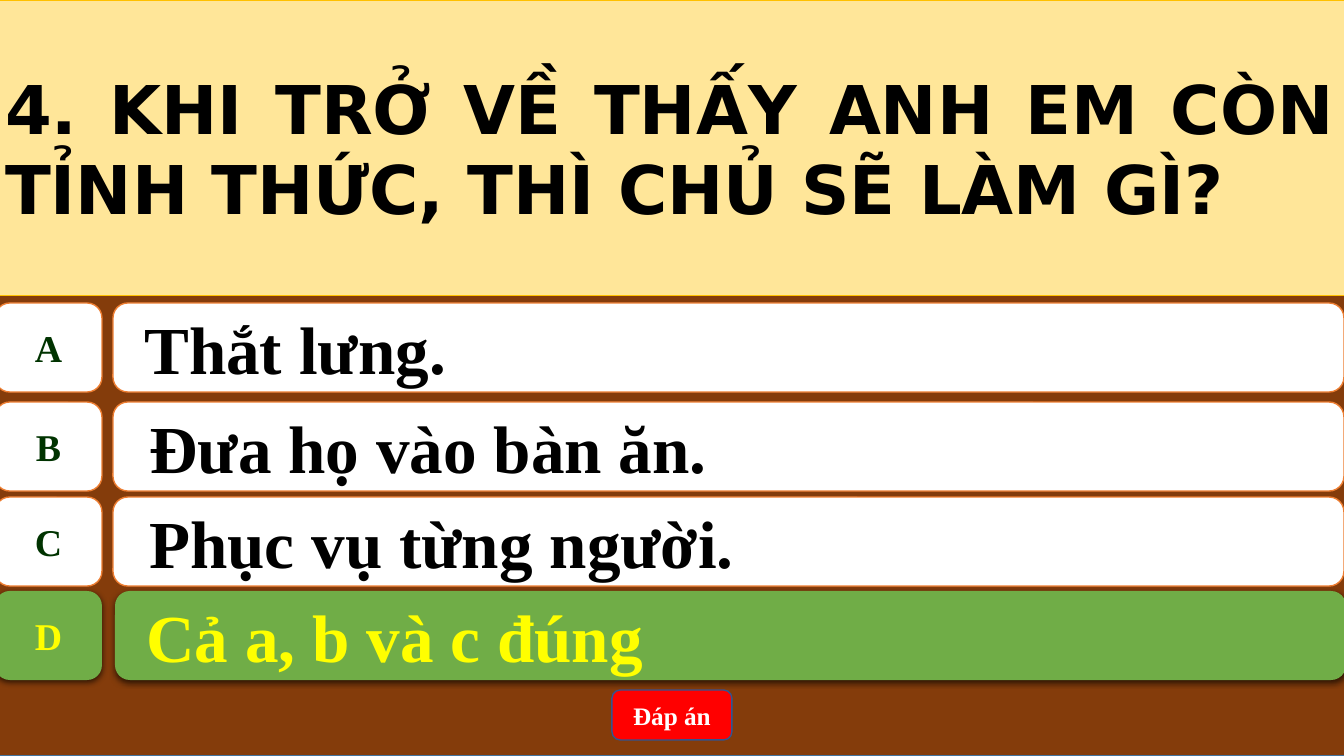
"""Build a quiz slide with a question, four choices and an answer button."""
from lxml import etree
from pptx import Presentation
from pptx.dml.color import RGBColor
from pptx.enum.shapes import MSO_SHAPE as Kind
from pptx.enum.text import MSO_ANCHOR as Anchor, MSO_AUTO_SIZE as Fit, PP_ALIGN as Align
from pptx.oxml.ns import qn
from pptx.util import Pt

SCALE = 914400 / 100.8
SERIF = "Times New Roman"
ROWS = [
    ("A", "Thắt lưng.", 303, 27, False),
    ("B", "Đưa họ vào bàn ăn.", 402, 32, False),
    ("C", "Phục vụ từng người.", 497, 32, False),
    ("D", "Cả a, b và c đúng", 591, 27, True),
]


def px(num):
    """Turn pixels into EMU."""
    return round(num * SCALE)


def color(code):
    """Turn a hex string into a colour."""
    return RGBColor.from_string(code)


def paint(shape, fill, line=None, width=1):
    """Set the fill and the outline of a shape."""
    shape.fill.solid()
    shape.fill.fore_color.rgb = color(fill)
    if line:
        shape.line.color.rgb = color(line)
        shape.line.width = Pt(width)
    else:
        shape.line.fill.background()


def write(shape, text, size, ink, align, font=SERIF):
    """Put one bold paragraph in a shape."""
    frame = shape.text_frame
    frame.text = text
    frame.word_wrap = True
    frame.auto_size = Fit.NONE
    frame.vertical_anchor = Anchor.MIDDLE
    para = frame.paragraphs[0]
    para.alignment = align
    para.font.name = font
    para.font.size = Pt(size)
    para.font.bold = True
    para.font.color.rgb = color(ink)


def block(slide, kind, box, fill, line=None):
    """Add a flat preset shape."""
    shape = slide.shapes.add_shape(kind, *map(px, box))
    shape.shadow.inherit = False
    paint(shape, fill, line)
    return shape


def shade(shape):
    """Give a shape a soft shadow below it."""
    effects = shape._element.spPr.find(qn("a:effectLst"))
    outer = etree.SubElement(effects, qn("a:outerShdw"), blurRad="57150",
                             dist="19050", dir="5400000", algn="ctr", rotWithShape="0")
    tint = etree.SubElement(outer, qn("a:srgbClr"), val="000000")
    etree.SubElement(tint, qn("a:alpha"), val="63000")


def choice(slide, mark, text, top, inset, right):
    """Add one choice: its letter and its wording."""
    fill, line = ("70AD47", None) if right else ("FFFFFF", "ED7D31")
    left = 115 if right else 113
    bar = block(slide, Kind.ROUNDED_RECTANGLE, (left, top, 1231, 89), fill, line)
    write(bar, text, 48, "FFFF00" if right else "000000", Align.LEFT)
    bar.text_frame.margin_left = px(inset)
    tag = block(slide, Kind.FLOWCHART_ALTERNATE_PROCESS, (-5, top, 107, 89), fill, line)
    write(tag, mark, 27, "FFFF00" if right else "003300", Align.CENTER)
    if right:
        shade(bar)
        shade(tag)


def header(slide, text):
    """Place the question in the title, above the board."""
    title = slide.shapes.title
    title.left, title.top, title.width, title.height = map(px, (-5, 0, 1350, 295))
    paint(title, "FFE699", "FFC000", 0.5)
    write(title, text, 48, "000000", Align.JUSTIFY, "DejaVu Sans")
    slide.shapes._spTree.append(title._element)


def main():
    """Build and save the slide."""
    deck = Presentation()
    deck.slide_width, deck.slide_height = px(1344), px(756)
    slide = deck.slides.add_slide(deck.slide_layouts[5])
    block(slide, Kind.RECTANGLE, (-5, 0, 1350, 756), "843C0B", "43739E")
    header(slide, "4. KHI TRỞ VỀ THẤY ANH EM CÒN TỈNH THỨC, THÌ CHỦ SẼ LÀM GÌ?")
    for row in ROWS:
        choice(slide, *row)
    button = block(slide, Kind.ROUNDED_RECTANGLE, (612, 690, 120, 50), "FF0000", "325491")
    write(button, "Đáp án", 18, "FFFFFF", Align.CENTER)
    deck.save("out.pptx")


if __name__ == "__main__":
    main()
